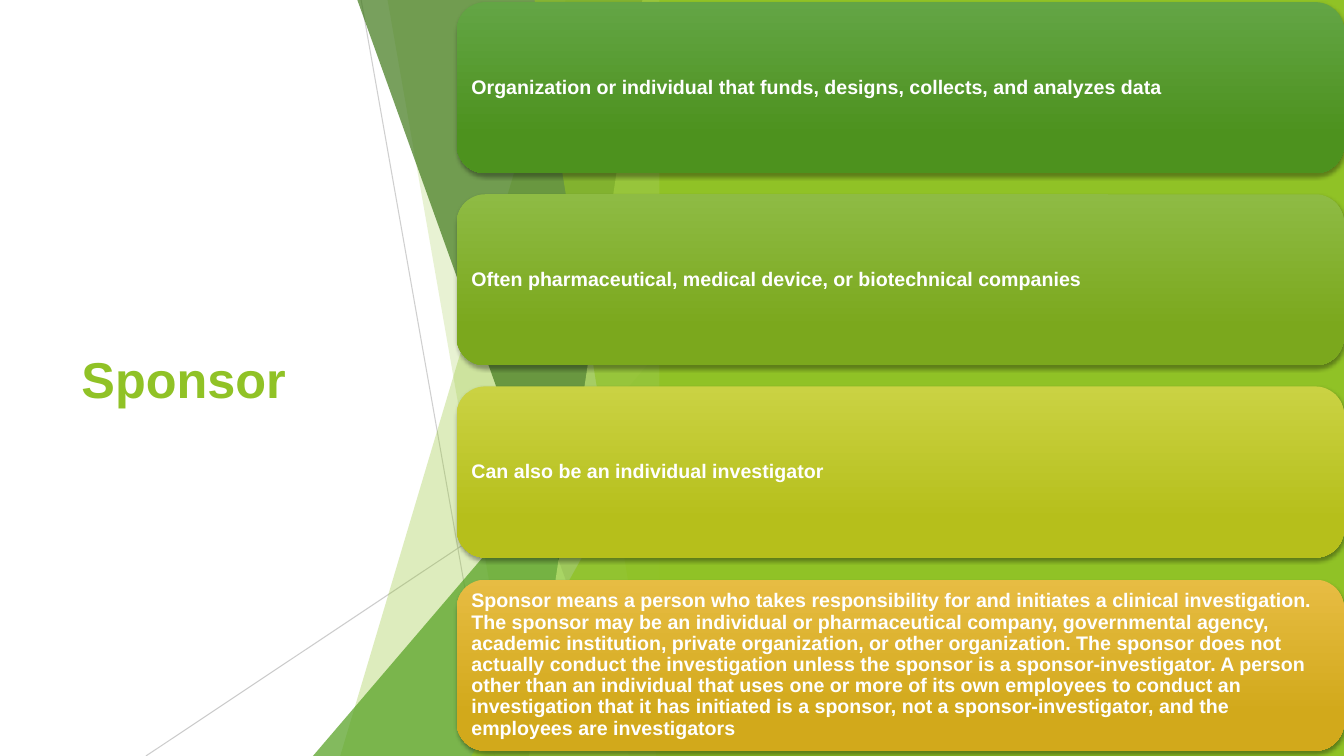
from typing import NamedTuple

from lxml.etree import SubElement
from pptx import Presentation
from pptx.dml.color import RGBColor
from pptx.enum.shapes import MSO_CONNECTOR, MSO_SHAPE
from pptx.enum.text import MSO_ANCHOR, PP_ALIGN
from pptx.oxml.ns import qn
from pptx.util import Pt

PX = 9525
SLIDE_WIDTH, SLIDE_HEIGHT = 1280, 720
FACET_RIGHT = 640
FONT = "Arial"
COLORS = {
    "lime": "90C226",
    "green": "54A021",
    "forest": "3F7819",
    "pale": "C0E474",
    "gray": "BFBFBF",
    "white": "FFFFFF",
    "shadow": "000000",
}


class Ray(NamedTuple):
    start: tuple[int, int]
    end: tuple[int, int]
    opacity: int


class Facet(NamedTuple):
    top_left: int
    bottom_left: int
    color: str
    opacity: int


class Wedge(NamedTuple):
    left: int
    top: int
    color: str
    opacity: int


class Card(NamedTuple):
    text: str
    light: str
    dark: str


RAYS = [Ray((344, 0), (471, 720), 75), Ray((639, 387), (139, 720), 80)]
BACKDROP = [
    Facet(539, 324, "lime", 30),
    Facet(369, 495, "lime", 20),
    Wedge(298, 320, "green", 72),
    Facet(340, 599, "forest", 70),
    Facet(612, 504, "pale", 70),
    Facet(509, 625, "lime", 65),
    Wedge(449, 377, "lime", 80),
]
CARDS = [
    Card("Organization or individual that funds, designs, collects, and analyzes data",
         "63A545", "4D921E"),
    Card("Often pharmaceutical, medical device, or biotechnical companies",
         "8EBB44", "7BA81D"),
    Card("Can also be an individual investigator", "CAD243", "B6BF1B"),
    Card("Sponsor means a person who takes responsibility for and initiates a clinical "
         "investigation. The sponsor may be an individual or pharmaceutical company, "
         "governmental agency, academic institution, private organization, or other "
         "organization. The sponsor does not actually conduct the investigation unless "
         "the sponsor is a sponsor-investigator. A person other than an individual that "
         "uses one or more of its own employees to conduct an investigation that it has "
         "initiated is a sponsor, not a sponsor-investigator, and the employees are "
         "investigators", "E7BC43", "D2A91B"),
]


def rgb(name: str) -> RGBColor:
    return RGBColor.from_string(COLORS[name])


def set_opacity(shape, percent: int) -> None:
    """Make the shape's solid colour partly transparent."""
    color = next(shape._element.spPr.iter(qn("a:srgbClr")))
    SubElement(color, qn("a:alpha"), val=str(percent * 1000))


def paint(shape, color: str) -> None:
    shape.shadow.inherit = False
    shape.fill.solid()
    shape.fill.fore_color.rgb = rgb(color)
    shape.line.fill.background()


def add_box(slide, kind: MSO_SHAPE, left: int, top: int, width: int, height: int):
    return slide.shapes.add_shape(kind, left * PX, top * PX, width * PX, height * PX)


def format_text(frame, size: int, color: str) -> None:
    frame.word_wrap = True
    frame.vertical_anchor = MSO_ANCHOR.MIDDLE
    para = frame.paragraphs[0]
    para.alignment = PP_ALIGN.LEFT
    para.line_spacing = 0.9 if size < 20 else 1.0
    font = para.runs[0].font
    font.name, font.size, font.bold = FONT, Pt(size), True
    font.color.rgb = rgb(color)


def add_title(slide) -> None:
    title = slide.shapes.title
    title.left, title.top, title.width, title.height = (
        68 * PX, 145 * PX, 372 * PX, 430 * PX)
    title.text_frame.text = "Sponsor"
    format_text(title.text_frame, 36, "lime")


def add_ray(slide, ray: Ray) -> None:
    line = slide.shapes.add_connector(
        MSO_CONNECTOR.STRAIGHT, *(value * PX for value in ray.start + ray.end))
    line.line.width = Pt(0.75)
    line.line.color.rgb = rgb("gray")
    set_opacity(line, ray.opacity)
    SubElement(line._element.spPr, qn("a:effectLst"))


def add_facet(slide, facet: Facet) -> None:
    builder = slide.shapes.build_freeform(facet.top_left, -1, scale=PX)
    builder.add_line_segments([
        (FACET_RIGHT, -1), (FACET_RIGHT, SLIDE_HEIGHT), (facet.bottom_left, SLIDE_HEIGHT)])
    shape = builder.convert_to_shape()
    paint(shape, facet.color)
    set_opacity(shape, facet.opacity)


def add_wedge(slide, wedge: Wedge) -> None:
    shape = add_box(slide, MSO_SHAPE.ISOSCELES_TRIANGLE, wedge.left, wedge.top,
                    FACET_RIGHT - wedge.left, SLIDE_HEIGHT - wedge.top)
    shape.adjustments[0] = 1.0
    paint(shape, wedge.color)
    set_opacity(shape, wedge.opacity)


def add_drop_shadow(shape) -> None:
    shape.shadow.inherit = False
    effects = shape._element.spPr.find(qn("a:effectLst"))
    shadow = SubElement(effects, qn("a:outerShdw"), blurRad=str(Pt(3)), dist=str(Pt(2)),
                        dir="5400000", algn="ctr", rotWithShape="0")
    color = SubElement(shadow, qn("a:srgbClr"), val=COLORS["shadow"])
    SubElement(color, qn("a:alpha"), val="35000")


def add_card(slide, index: int, card: Card) -> None:
    shape = add_box(slide, MSO_SHAPE.ROUNDED_RECTANGLE, 435, 2 + index * 550 // 3, 845, 163)
    shape.line.fill.background()
    shape.fill.gradient()
    shape.fill.gradient_angle = 270
    for stop, position, color in zip(
            shape.fill.gradient_stops, (0, 0.78), (card.light, card.dark)):
        stop.position = position
        stop.color.rgb = RGBColor.from_string(color)
    add_drop_shadow(shape)
    frame = shape.text_frame
    frame.margin_left = frame.margin_right = 6 * PX
    frame.margin_top = frame.margin_bottom = 6 * PX
    frame.text = card.text
    format_text(frame, 14, "white")


def main() -> None:
    deck = Presentation()
    deck.slide_width, deck.slide_height = SLIDE_WIDTH * PX, SLIDE_HEIGHT * PX
    slide = deck.slides.add_slide(deck.slide_layouts[5])
    add_title(slide)
    for ray in RAYS:
        add_ray(slide, ray)
    for piece in BACKDROP:
        if isinstance(piece, Facet):
            add_facet(slide, piece)
        else:
            add_wedge(slide, piece)
    paint(add_box(slide, MSO_SHAPE.RECTANGLE, 628, 0, 652, SLIDE_HEIGHT), "lime")
    for index, card in enumerate(CARDS):
        add_card(slide, index, card)
    deck.save("out.pptx")


if __name__ == "__main__":
    main()
